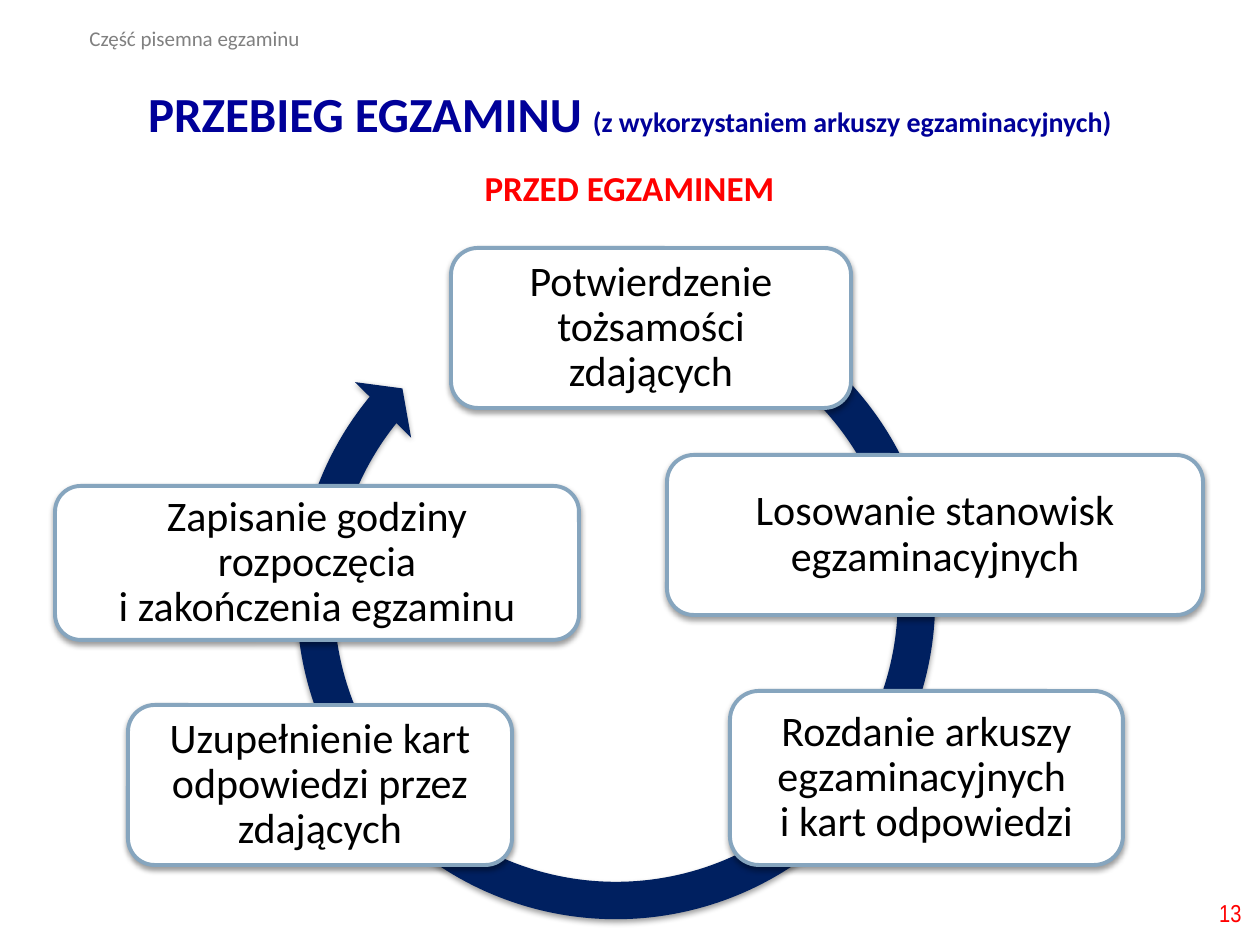
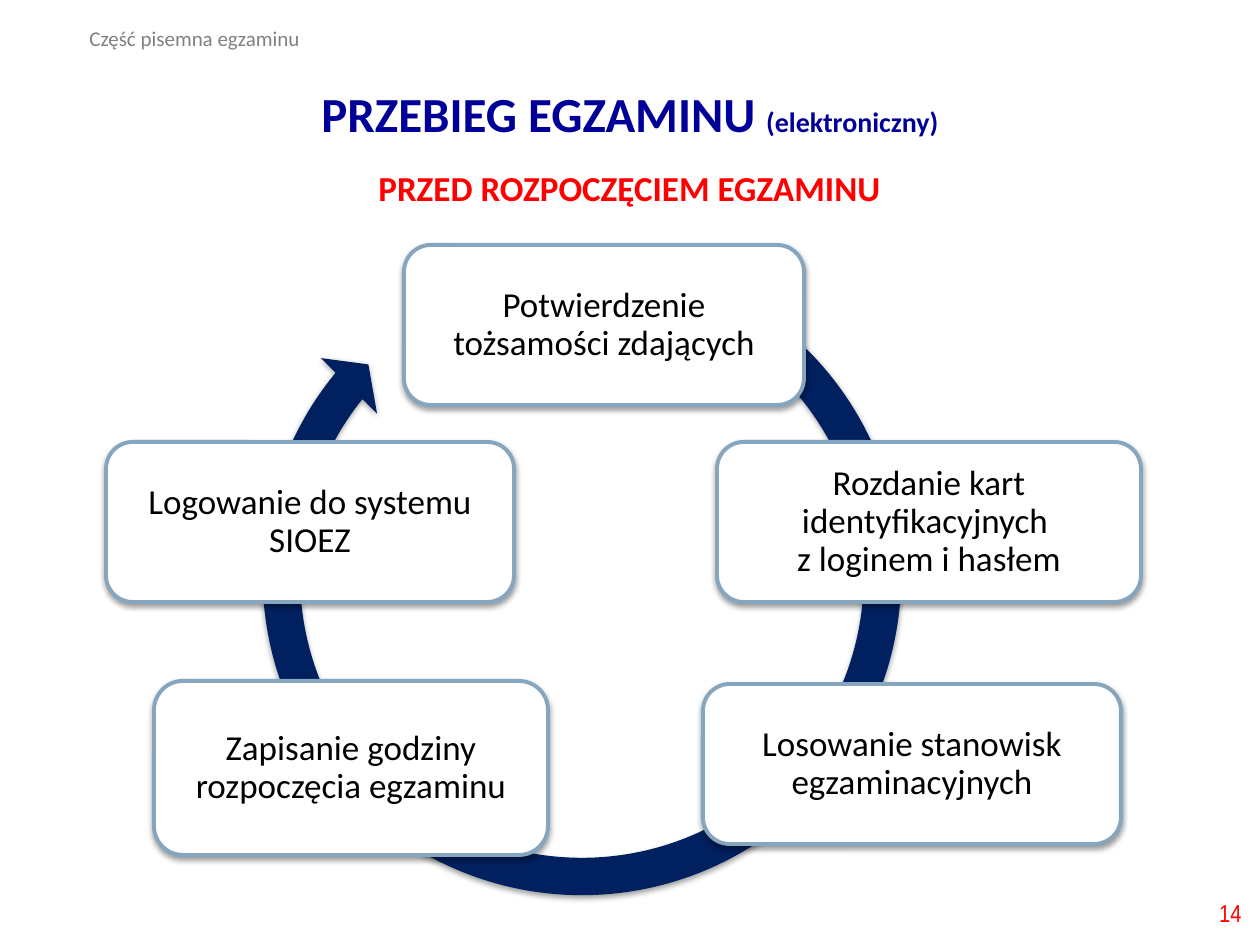
from lxml import etree
from pptx import Presentation
from pptx.dml.color import RGBColor
from pptx.enum.shapes import MSO_SHAPE
from pptx.enum.text import MSO_ANCHOR, MSO_AUTO_SIZE, PP_ALIGN
from pptx.oxml.ns import qn
from pptx.util import Pt

ARC, ROUND = MSO_SHAPE.CIRCULAR_ARROW, MSO_SHAPE.ROUNDED_RECTANGLE
LEFT, MID, RIGHT = PP_ALIGN.LEFT, PP_ALIGN.CENTER, PP_ALIGN.RIGHT
TOP, CENTRE = MSO_ANCHOR.TOP, MSO_ANCHOR.MIDDLE
NONE = MSO_AUTO_SIZE.NONE

BLACK = RGBColor(0, 0, 0)
WHITE = RGBColor(0xFF, 0xFF, 0xFF)
NAVY = RGBColor(0x00, 0x20, 0x60)
BLUE = RGBColor(0x00, 0x00, 0x99)
STEEL = RGBColor(0x86, 0xA5, 0xBE)
RED = RGBColor(0xFF, 0, 0)
GREY = RGBColor(0x80, 0x80, 0x80)

SCALE = 914400 / 126
BEND = (0.055, 3.307, 131.528, 177.78, 0.058)
HEAD = "Część pisemna egzaminu"
TITLE = "PRZEBIEG EGZAMINU "


def px(*nums):
    return [round(n * SCALE) for n in nums]


def write(shape, runs, color, align=MID, anchor=CENTRE, space=0.9, face="Calibri", bold=False):
    frame = shape.text_frame
    look = {"word_wrap": True, "auto_size": NONE, "vertical_anchor": anchor}
    for key, val in look.items():
        setattr(frame, key, val)
    para = frame.paragraphs[0]
    para.alignment, para.line_spacing = align, space
    for text, size in runs:
        start, *rest = text.split("\n")
        parts = [start]
        for more in rest:
            parts += [None, more]
        for part in parts:
            if part is None:
                para.add_line_break()
                continue
            font = (run := para.add_run()).font
            run.text = part
            for key, val in {"name": face, "size": Pt(size), "bold": bold}.items():
                setattr(font, key, val)
            font.color.rgb = color


SLIDES = [
    {
        "page": "13", "mode": "(z wykorzystaniem arkuszy egzaminacyjnych)",
        "stage": "PRZED EGZAMINEM", "ring": (276, 260), "size": 24, "inset": 13,
        "steps": [
            ("Potwierdzenie tożsamości zdających", 451, 248, 400, 160),
            ("Losowanie stanowisk egzaminacyjnych", 667, 455, 536, 160),
            ("Rozdanie arkuszy egzaminacyjnych \ni kart odpowiedzi", 730, 691, 393, 174),
            ("Uzupełnienie kart odpowiedzi przez zdających", 128, 705, 384, 160),
            ("Zapisanie godziny rozpoczęcia\ni zakończenia egzaminu", 55, 486, 524, 154),
        ],
    },
    {
        "page": "14", "mode": "(elektroniczny)",
        "stage": "PRZED ROZPOCZĘCIEM EGZAMINU", "ring": (242, 236), "size": 20, "inset": 10,
        "steps": [
            ("Potwierdzenie tożsamości zdających", 404, 245, 400, 160),
            ("Rozdanie kart identyfikacyjnych \nz loginem i hasłem", 717, 442, 424, 160),
            ("Losowanie stanowisk egzaminacyjnych", 703, 684, 418, 160),
            ("Zapisanie godziny rozpoczęcia egzaminu", 154, 681, 394, 174),
            ("Logowanie do systemu SIOEZ", 106, 442, 408, 160),
        ],
    },
]

deck = Presentation()
deck.slide_width, deck.slide_height = px(1260, 945)

for data in SLIDES:
    slide = deck.slides.add_slide(deck.slide_layouts[5])
    shapes = slide.shapes
    title = shapes.title
    title.left, title.top, title.width, title.height = px(87, 79, 1086, 76)
    write(title, [(TITLE, 28), (data["mode"], 16)], BLUE, bold=True)

    ring = shapes.add_shape(ARC, *px(*data["ring"], 680, 680))
    for i, bend in enumerate(BEND):
        ring.adjustments[i] = bend
    ring.fill.solid()
    ring.fill.fore_color.rgb = NAVY
    ring.line.fill.background()
    cast = [ring]

    for text, *place in data["steps"]:
        step = shapes.add_shape(ROUND, *px(*place))
        step.fill.solid()
        step.fill.fore_color.rgb = WHITE
        step.line.color.rgb = STEEL
        step.line.width = Pt(2.25)
        for side in ("left", "top", "right", "bottom"):
            setattr(step.text_frame, "margin_" + side, px(data["inset"])[0])
        write(step, [(text, data["size"])], BLACK)
        cast.append(step)

    for shape in cast:
        shape.shadow.inherit = False
        glow = shape.element.spPr.find(qn("a:effectLst"))
        shade = etree.SubElement(glow, qn("a:outerShdw"), blurRad="40000",
                                 dist="20000", dir="5400000", rotWithShape="0")
        tint = etree.SubElement(shade, qn("a:srgbClr"), val=str(BLACK))
        etree.SubElement(tint, qn("a:alpha"), val="38000")

    stage = shapes.add_textbox(*px(300, 152, 659, 76))
    write(stage, [(data["stage"], 20)], RED, bold=True)
    head = shapes.add_textbox(*px(77, 19, 336, 38))
    write(head, [(HEAD, 12)], GREY, LEFT, TOP, 1.0)
    page = shapes.add_textbox(*px(970, 888, 284, 50))
    write(page, [(data["page"], 14)], RED, RIGHT, CENTRE, 1.0, "Arial Narrow")

deck.save("out.pptx")
